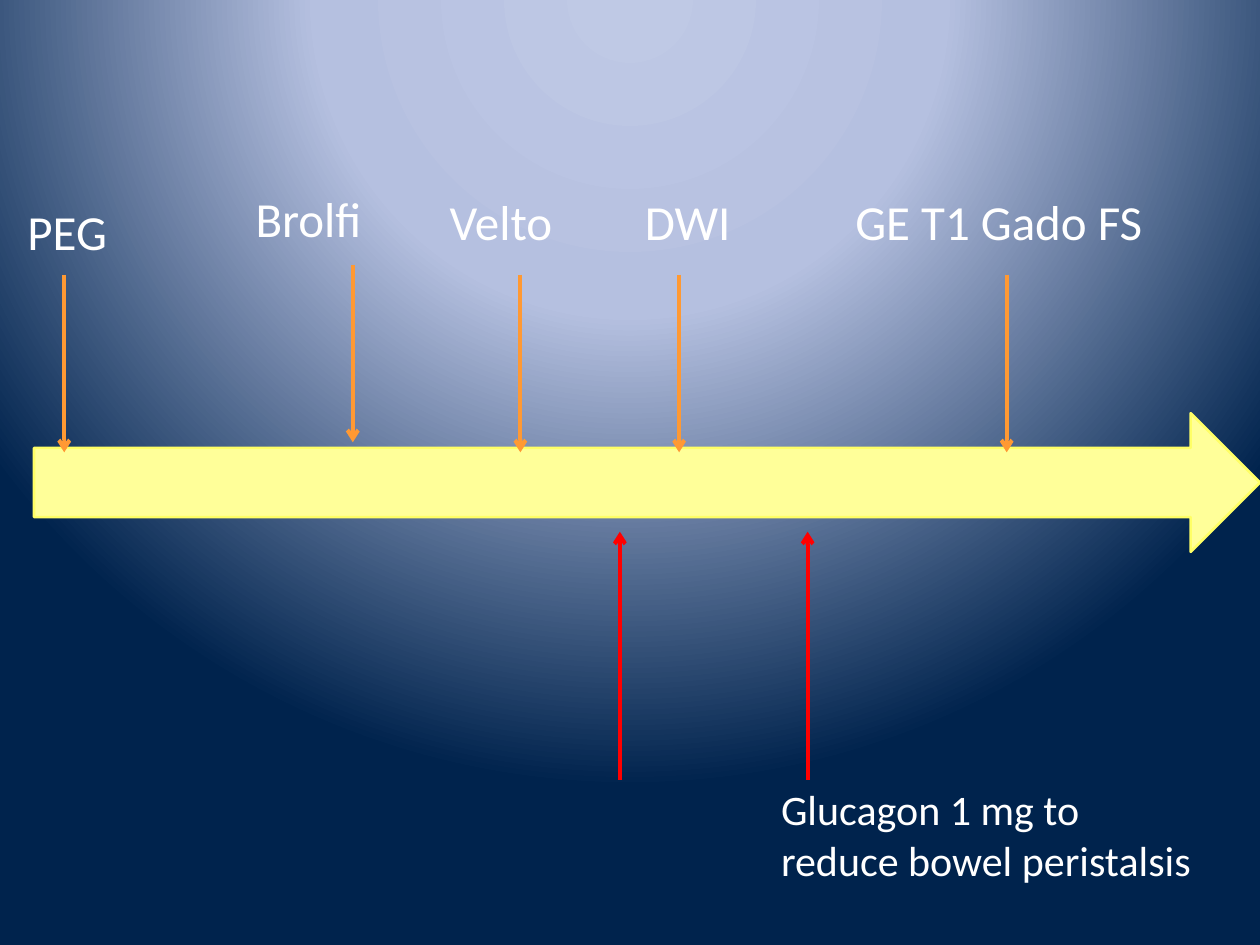
from lxml import etree
from pptx import Presentation
from pptx.dml.color import RGBColor
from pptx.enum.shapes import MSO_CONNECTOR, MSO_SHAPE
from pptx.enum.text import MSO_AUTO_SIZE
from pptx.oxml import parse_xml
from pptx.oxml.ns import nsdecls, qn
from pptx.util import Inches, Pt

WHITE = RGBColor(0xFF, 0xFF, 0xFF)
YELLOW = RGBColor(0xFF, 0xFF, 0x99)
YELLOW_EDGE = RGBColor(0xFF, 0xFF, 0x66)
ORANGE = RGBColor(0xFF, 0x99, 0x33)
RED = RGBColor(0xFF, 0x00, 0x00)
BACKGROUND_STOPS = [
    (0, RGBColor(0xBF, 0xC9, 0xE5)),
    (40, RGBColor(0xB5, 0xC0, 0xE0)),
    (100, RGBColor(0x00, 0x23, 0x4D)),
]

TIMELINE = (0.27, 3.28, 9.73, 1.1)
SEQUENCE_ARROW_LENGTH = 1.41
SEQUENCES = [
    ("PEG", (0.12, 1.55, 0.84, 0.57), (0.51, 2.18)),
    ("Brolfi", (1.93, 1.45, 1.04, 0.57), (2.8, 2.1)),
    ("Velto", (3.47, 1.47, 1.11, 0.57), (4.13, 2.18)),
    ("DWI", (5.02, 1.47, 0.89, 0.57), (5.39, 2.18)),
    ("GE T1 Gado FS", (6.69, 1.47, 2.53, 0.57), (7.99, 2.18)),
]
GLUCAGON_TEXT = "Glucagon 1 mg to\nreduce bowel peristalsis"
GLUCAGON_BOX = (6.1, 6.17, 3.49, 0.91)
GLUCAGON_TIMES = [4.92, 6.41]
GLUCAGON_START, GLUCAGON_END = 6.19, 4.22


def set_background(slide):
    slide.background.fill.solid()
    properties = slide.element.find(".//" + qn("p:bgPr"))
    stops = "".join(
        f'<a:gs pos="{position * 1000}"><a:srgbClr val="{color}"/></a:gs>'
        for position, color in BACKGROUND_STOPS
    )
    gradient = parse_xml(
        f'<a:gradFill {nsdecls("a")} rotWithShape="1"><a:gsLst>{stops}</a:gsLst>'
        '<a:path path="circle"><a:fillToRect l="50000" t="-80000" r="50000" b="180000"/>'
        "</a:path></a:gradFill>"
    )
    properties.replace(properties[0], gradient)


def add_timeline(slide):
    timeline = slide.shapes.add_shape(MSO_SHAPE.RIGHT_ARROW, *map(Inches, TIMELINE))
    timeline.shadow.inherit = False
    timeline.fill.solid()
    timeline.fill.fore_color.rgb = YELLOW
    timeline.line.color.rgb = YELLOW_EDGE
    timeline.line.width = Pt(1.5)


def add_arrow(slide, x, start, end, color):
    arrow = slide.shapes.add_connector(
        MSO_CONNECTOR.STRAIGHT, Inches(x), Inches(start), Inches(x), Inches(end)
    )
    arrow.line.color.rgb = color
    arrow.line.width = Pt(2.25)
    properties = arrow.element.spPr
    etree.SubElement(properties.find(qn("a:ln")), qn("a:tailEnd"), type="arrow")
    etree.SubElement(properties, qn("a:effectLst"))


def add_label(slide, text, box, size):
    text_frame = slide.shapes.add_textbox(*map(Inches, box)).text_frame
    text_frame.word_wrap = False
    text_frame.auto_size = MSO_AUTO_SIZE.SHAPE_TO_FIT_TEXT
    text_frame.text = text
    for paragraph in text_frame.paragraphs:
        for run in paragraph.runs:
            run.font.name = "Calibri"
            run.font.size = Pt(size)
            run.font.color.rgb = WHITE


def main():
    presentation = Presentation()
    presentation.slide_width = Inches(10)
    presentation.slide_height = Inches(7.5)
    slide = presentation.slides.add_slide(presentation.slide_layouts[6])
    set_background(slide)
    add_timeline(slide)
    for name, box, (x, top) in SEQUENCES:
        add_arrow(slide, x, top, top + SEQUENCE_ARROW_LENGTH, ORANGE)
        add_label(slide, name, box, 28)
    for x in GLUCAGON_TIMES:
        add_arrow(slide, x, GLUCAGON_START, GLUCAGON_END, RED)
    add_label(slide, GLUCAGON_TEXT, GLUCAGON_BOX, 24)
    presentation.save("out.pptx")


if __name__ == "__main__":
    main()
